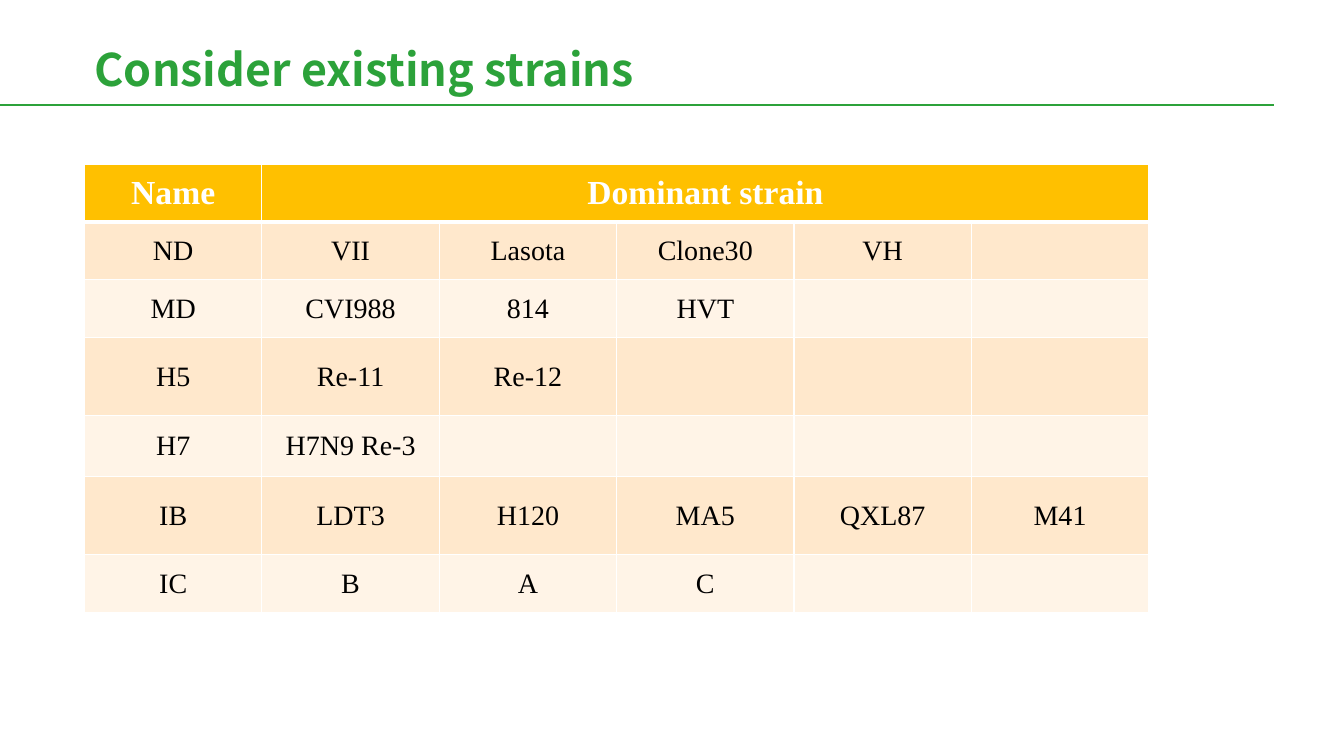
from dataclasses import dataclass

from lxml import etree
from pptx import Presentation
from pptx.dml.color import RGBColor
from pptx.enum.shapes import MSO_CONNECTOR
from pptx.enum.text import MSO_ANCHOR, MSO_AUTO_SIZE, PP_ALIGN
from pptx.oxml.ns import qn
from pptx.util import Cm, Pt

STRAIGHT = MSO_CONNECTOR.STRAIGHT
MIDDLE = MSO_ANCHOR.MIDDLE
NO_AUTOFIT = MSO_AUTO_SIZE.NONE
LEFT, CENTER = PP_ALIGN.LEFT, PP_ALIGN.CENTER

GREEN, AMBER, WHITE, BLACK = "2CA23A", "FFC000", "FFFFFF", "000000"
BANDS = ("FFE8CC", "FFF4E7")
TITLE_FONT, TABLE_FONT = "Noto Sans CJK SC", "Times New Roman"
COLUMNS = 6
COLUMN_WIDTH = 4.47
MARGIN = 2.13


@dataclass(frozen=True)
class StrainRow:
    height: float
    texts: tuple[str, ...]


HEADER = StrainRow(1.45, ("Name", "Dominant strain"))
STRAINS = (
    StrainRow(1.45, ("ND", "VII", "Lasota", "Clone30", "VH")),
    StrainRow(1.45, ("MD", "CVI988", "814", "HVT")),
    StrainRow(1.98, ("H5", "Re-11", "Re-12")),
    StrainRow(1.52, ("H7", "H7N9 Re-3")),
    StrainRow(1.98, ("IB", "LDT3", "H120", "MA5", "QXL87", "M41")),
    StrainRow(1.45, ("IC", "B", "A", "C")),
)


def rgb(value: str) -> RGBColor:
    return RGBColor.from_string(value)


def format_text(frame, font: str, size: float, color: str, bold: bool, align) -> None:
    for paragraph in frame.paragraphs:
        paragraph.alignment = align
        for run in paragraph.runs:
            run.font.name = font
            run.font.size = Pt(size)
            run.font.bold = bold
            run.font.color.rgb = rgb(color)


def set_borders(cell, top: float, bottom: float) -> None:
    properties = cell._tc.get_or_add_tcPr()
    for side, width in (("L", 1), ("R", 1), ("T", top), ("B", bottom)):
        border = etree.SubElement(properties, qn(f"a:ln{side}"), w=str(Pt(width)))
        fill = etree.SubElement(border, qn("a:solidFill"))
        etree.SubElement(fill, qn("a:srgbClr"), val=WHITE)


def fill_row(table, index: int, row: StrainRow) -> None:
    header = index == 0
    background = AMBER if header else BANDS[(index - 1) % 2]
    size, color = (24, WHITE) if header else (20, BLACK)
    table.rows[index].height = Cm(row.height)
    for column in range(COLUMNS):
        cell = table.cell(index, column)
        set_borders(cell, 3 if index == 1 else 1, 3 if header else 1)
        cell.fill.solid()
        cell.fill.fore_color.rgb = rgb(background)
        cell.vertical_anchor = MIDDLE
        if column < len(row.texts):
            cell.text_frame.text = row.texts[column]
            format_text(cell.text_frame, TABLE_FONT, size, color, header, CENTER)


def add_title(slide) -> None:
    title = slide.shapes.title
    title.left, title.top = Cm(MARGIN), Cm(1.07)
    title.width, title.height = Cm(27.03), Cm(1.47)
    frame = title.text_frame
    frame.text = "Consider existing strains"
    frame.auto_size = NO_AUTOFIT
    frame.word_wrap = True
    frame.vertical_anchor = MIDDLE
    frame.paragraphs[0].line_spacing = 0.9
    format_text(frame, TITLE_FONT, 32, GREEN, True, LEFT)


def add_title_rule(slide) -> None:
    rule = slide.shapes.add_connector(STRAIGHT, Cm(0), Cm(2.64), Cm(32.11), Cm(2.64))
    rule.line.color.rgb = rgb(GREEN)
    rule.line.width = Pt(1.5)
    etree.SubElement(rule._element.spPr, qn("a:effectLst"))


def add_strain_table(slide) -> None:
    rows = (HEADER, *STRAINS)
    height = sum(row.height for row in rows)
    table = slide.shapes.add_table(
        len(rows), COLUMNS, Cm(MARGIN), Cm(4.15),
        Cm(COLUMN_WIDTH * COLUMNS), Cm(height),
    ).table
    table.horz_banding = False
    for column in table.columns:
        column.width = Cm(COLUMN_WIDTH)
    for index, row in enumerate(rows):
        fill_row(table, index, row)
    table.cell(0, 1).merge(table.cell(0, COLUMNS - 1))


def main() -> None:
    presentation = Presentation()
    presentation.slide_width, presentation.slide_height = Cm(33.87), Cm(19.05)
    slide = presentation.slides.add_slide(presentation.slide_layouts[5])

    # Heading
    add_title_rule(slide)
    add_title(slide)

    # Strains by disease
    add_strain_table(slide)

    presentation.save("out.pptx")


if __name__ == "__main__":
    main()
